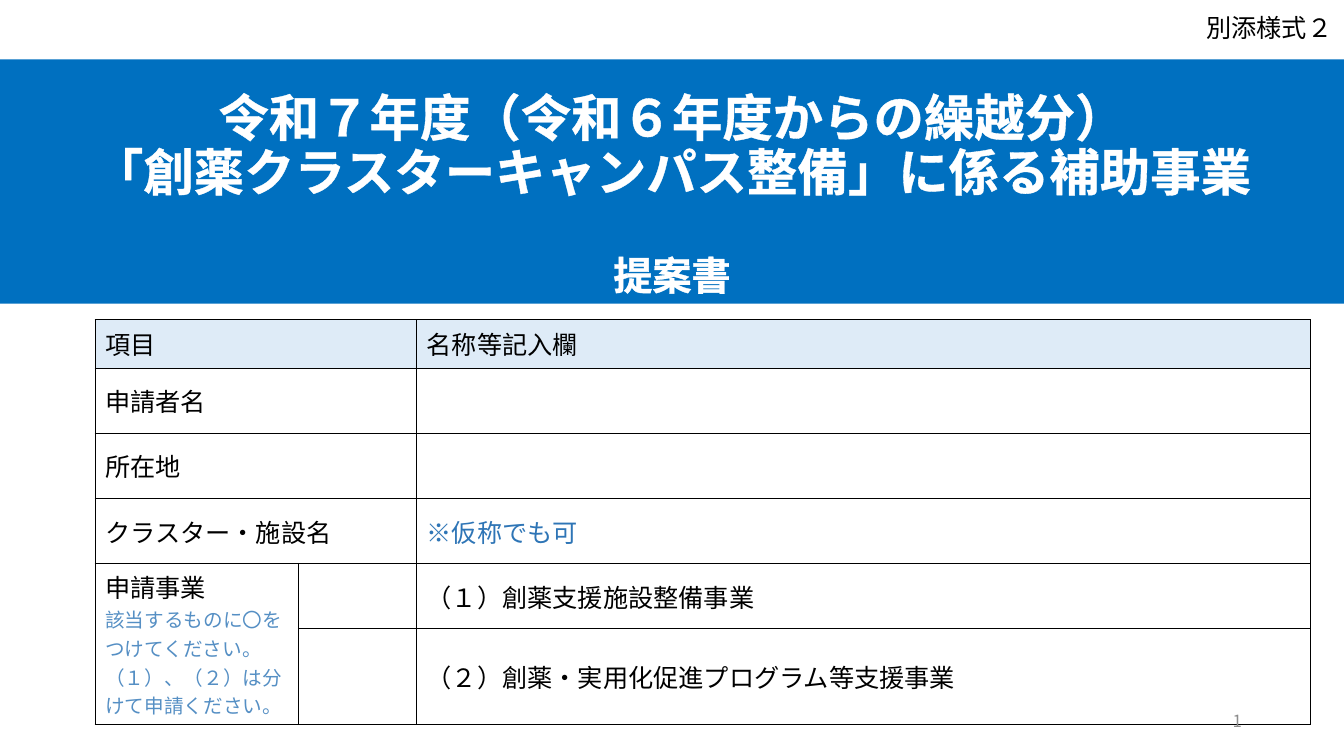
from lxml import etree
from pptx import Presentation
from pptx import util as u
from pptx.dml import color
from pptx.enum import shapes, text
from pptx.oxml import ns, xmlchemy as x

FONT = "Noto Sans CJK JP"
COLORS = {"band": "0070C0", "head": "DEEBF7", "black": "000000", "white": "FFFFFF",
          "hint": "2E75B6", "note": "558FC4", "page": "8C8C8C"}
MIDDLE = text.MSO_ANCHOR.MIDDLE


def rgb(name):
    """Return the named colour."""
    return color.RGBColor.from_string(COLORS[name])


def add_line(parent, tag, name, points):
    """Append a solid outline element and return it."""
    ln = etree.SubElement(parent, ns.qn(tag), w=str(u.Pt(points)))
    fill = etree.SubElement(ln, ns.qn("a:solidFill"))
    etree.SubElement(fill, ns.qn("a:srgbClr"), val=COLORS[name])
    return ln


def style(p, size, name, bold=False):
    """Format every run of a paragraph."""
    for r in p.runs:
        r.font.size, r.font.bold, r.font.name = u.Pt(size), bold, FONT
        r.font.color.rgb = rgb(name)
        etree.SubElement(r.font._element, ns.qn("a:ea"), typeface=FONT)


def add_label(s, box, words, size, name, align, anchor):
    """Add a one-line text box."""
    tf = s.shapes.add_textbox(*map(u.Cm, box)).text_frame
    tf.word_wrap, tf.vertical_anchor = True, anchor
    tf.text = words
    tf.paragraphs[0].alignment = align
    style(tf.paragraphs[0], size, name)


def add_title(s):
    """Add the blue title band."""
    sp = s.shapes.add_shape(shapes.MSO_SHAPE.RECTANGLE, 0, u.Cm(1.5), u.Cm(33.87), u.Cm(6.15))
    sp.shadow.inherit = False
    sp.fill.solid()
    sp.fill.fore_color.rgb = rgb("band")
    sp.line.fill.background()
    tf = sp.text_frame
    tf.vertical_anchor = text.MSO_ANCHOR.BOTTOM
    tf.text = "令和７年度（令和６年度からの繰越分）\v「創薬クラスターキャンパス整備」に係る補助事業\v\v提案書"
    p = tf.paragraphs[0]
    p.alignment, p.line_spacing = text.PP_ALIGN.CENTER, 0.9
    style(p, 36, "white", True)
    p.runs[-1].font.size = u.Pt(28)
    for r in p.runs:
        rpr = r.font._element
        rpr.insert(0, add_line(rpr, "a:ln", "white", 0.75))
    for br in p._p.findall(ns.qn("a:br")):
        etree.SubElement(br, ns.qn("a:rPr"), sz="3600")


def fill_cell(cell, lines, fill=None):
    """Write (words, size, colour) lines into a cell."""
    tf = cell.text_frame
    tf.text = "\n".join(words for words, _, _ in lines)
    for p, (_, size, name) in zip(tf.paragraphs, lines):
        style(p, size, name)
    if fill:
        cell.fill.solid()
        cell.fill.fore_color.rgb = rgb(fill)
    else:
        cell.vertical_anchor = MIDDLE


def add_form(s):
    """Add the entry table."""
    rows = [("項目", "名称等記入欄"), ("申請者名", ""), ("所在地", ""),
            ("クラスター・施設名", "※仮称でも可"), ("申請事業", "（１）創薬支援施設整備事業"),
            ("", "（２）創薬・実用化促進プログラム等支援事業")]
    notes = [("該当するものに〇をつけてください。", 14, "note"),
             ("（１）、（２）は分けて申請ください。", 14, "note")]
    frame = s.shapes.add_table(len(rows), 3, *map(u.Cm, (2.4, 8.06, 30.62, 9.6)))
    table = frame.table
    table.horz_banding = False
    for col, width in zip(table.columns, (5.12, 2.98, 22.52)):
        col.width = u.Cm(width)
    for row, height in zip(table.rows, (1.22, 1.64, 1.64, 1.64, 1.64, 1.82)):
        row.height = u.Cm(height)
    for cell in table.iter_cells():
        tcpr = cell._tc.get_or_add_tcPr()
        for side in "LRTB":
            add_line(tcpr, f"a:ln{side}", "black", 1)
        cell.fill.background()
    for i in range(4):
        table.cell(i, 0).merge(table.cell(i, 1))
    table.cell(4, 0).merge(table.cell(5, 0))
    for i, (item, entry) in enumerate(rows):
        fill = "head" if i == 0 else None
        if item:
            fill_cell(table.cell(i, 0), [(item, 18, "black")] + (notes if i == 4 else []), fill)
        fill_cell(table.cell(i, 2), [(entry, 18, "hint" if i == 3 else "black")], fill)


def main():
    """Build and save the slide."""
    prs = Presentation()
    prs.slide_width, prs.slide_height = u.Cm(33.87), u.Cm(19.05)
    s = prs.slides.add_slide(prs.slide_layouts[6])
    add_title(s)
    add_form(s)
    add_label(s, (30.15, 0.18, 4.06, 1.02), "別添様式２", 18, "black",
              text.PP_ALIGN.LEFT, text.MSO_ANCHOR.TOP)
    add_label(s, (23.93, 17.65, 7.62, 1.02), "1", 12, "page", text.PP_ALIGN.RIGHT, MIDDLE)
    prs.save("out.pptx")


if __name__ == "__main__":
    main()
